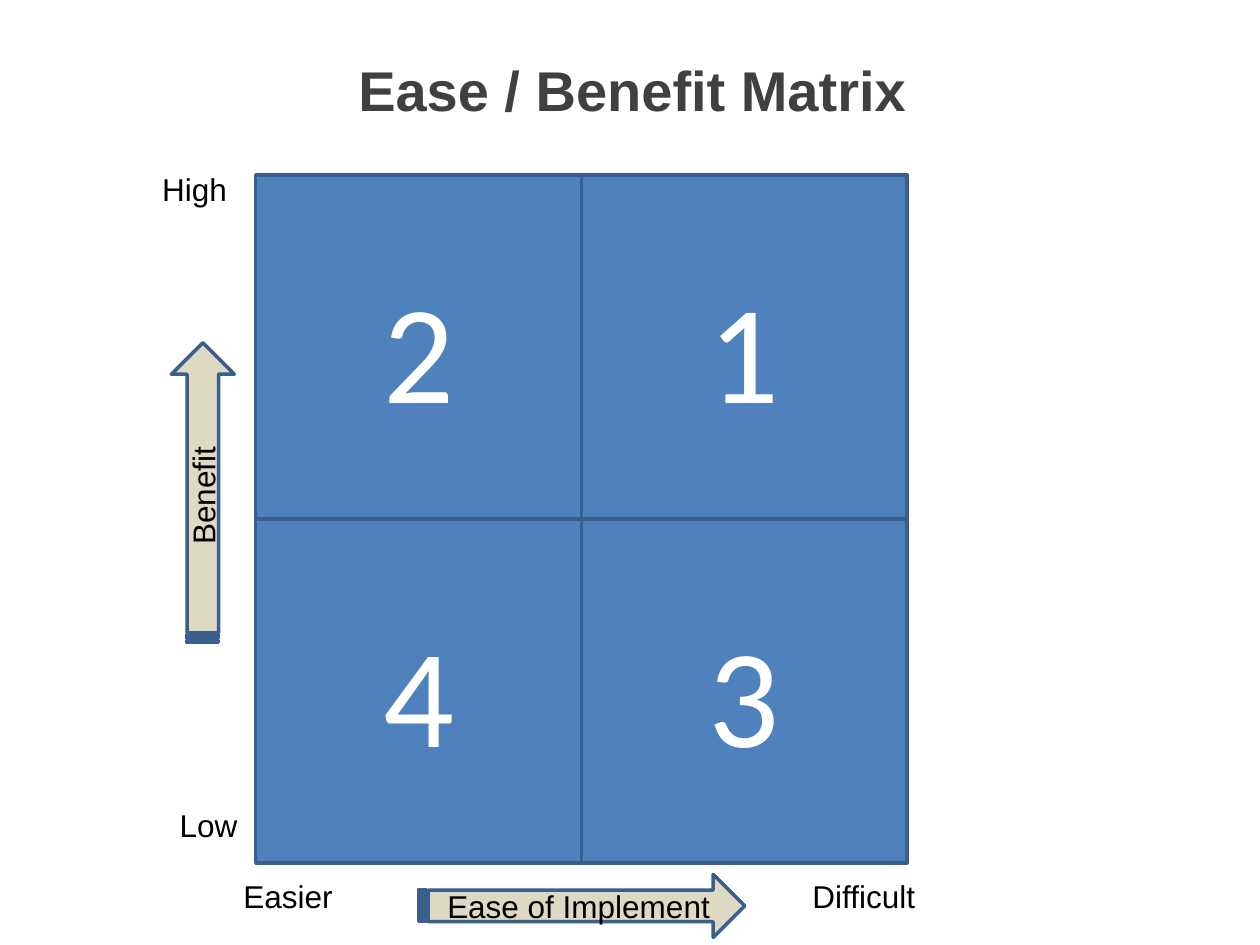
from pptx import Presentation
from pptx.dml.color import RGBColor
from pptx.enum.shapes import MSO_SHAPE as SHAPE
from pptx.enum.text import MSO_ANCHOR as ANCHOR, MSO_AUTO_SIZE as AUTO_SIZE, PP_ALIGN as ALIGN
from pptx.util import Inches, Pt

COLORS = {
    "quadrant": "4F81BD",
    "outline": "3A5F8C",
    "arrow": "DDD9C3",
    "title": "404040",
    "label": "000000",
    "number": "FFFFFF",
}
LABEL = {"name": "Arial", "size": Pt(18)}
NUMBER = {"name": "Calibri", "size": Pt(80)}
TITLE = {"name": "Arial", "size": Pt(32), "bold": True}


def rgb(key):
    return RGBColor.from_string(COLORS[key])


def write(holder, text, style, color, anchor=ANCHOR.MIDDLE):
    frame = holder.text_frame
    frame.word_wrap = True
    frame.vertical_anchor = anchor
    paragraph = frame.paragraphs[0]
    paragraph.alignment = ALIGN.CENTER
    run = paragraph.add_run()
    run.text = text
    for attribute, value in style.items():
        setattr(run.font, attribute, value)
    run.font.color.rgb = rgb(color)


def add_outlined(slide, preset, box, fill):
    outlined = slide.shapes.add_shape(preset, *map(Inches, box))
    outlined.shadow.inherit = False
    outlined.fill.solid()
    outlined.fill.fore_color.rgb = rgb(fill)
    outlined.line.color.rgb = rgb("outline")
    outlined.line.width = Pt(2)
    return outlined


def add_title(slide, box, text):
    title = slide.shapes.add_textbox(*map(Inches, box))
    write(title, text, TITLE, "title")


def add_matrix(slide, box, rows):
    left, top, width, height = box
    cell_width, cell_height = width / len(rows[0]), height / len(rows)
    for row, numbers in enumerate(rows):
        for column, number in enumerate(numbers):
            cell = (left + column * cell_width, top + row * cell_height,
                    cell_width, cell_height)
            quadrant = add_outlined(slide, SHAPE.RECTANGLE, cell, "quadrant")
            write(quadrant, number, NUMBER, "number")


def add_axis_arrow(slide, box, text, rotation=0):
    arrow = add_outlined(slide, SHAPE.STRIPED_RIGHT_ARROW, box, "arrow")
    arrow.rotation = rotation
    write(arrow, text, LABEL, "label")


def add_axis_end(slide, box, text):
    end = slide.shapes.add_textbox(*map(Inches, box))
    write(end, text, LABEL, "label", ANCHOR.TOP)
    end.text_frame.auto_size = AUTO_SIZE.SHAPE_TO_FIT_TEXT


def main():
    deck = Presentation()
    deck.slide_width, deck.slide_height = Inches(10), Inches(7.5)
    slide = deck.slides.add_slide(deck.slide_layouts[6])

    add_matrix(slide, (2.03, 1.39, 5.17, 5.46), [["2", "1"], ["4", "3"]])
    add_axis_arrow(slide, (3.32, 6.94, 2.59, 0.5), "Ease of Implement")
    add_axis_arrow(slide, (0.42, 3.66, 2.38, 0.5), "Benefit", rotation=270)
    for text, box in {
        "High": (1.13, 1.3, 0.83, 0.4),
        "Low": (1.24, 6.35, 0.83, 0.4),
        "Difficult": (6.26, 6.91, 1.19, 0.4),
        "Easier": (1.69, 6.91, 1.19, 0.4),
    }.items():
        add_axis_end(slide, box, text)
    add_title(slide, (0.04, 0.08, 9.96, 1.25), "Ease / Benefit Matrix")

    deck.save("out.pptx")


if __name__ == "__main__":
    main()
